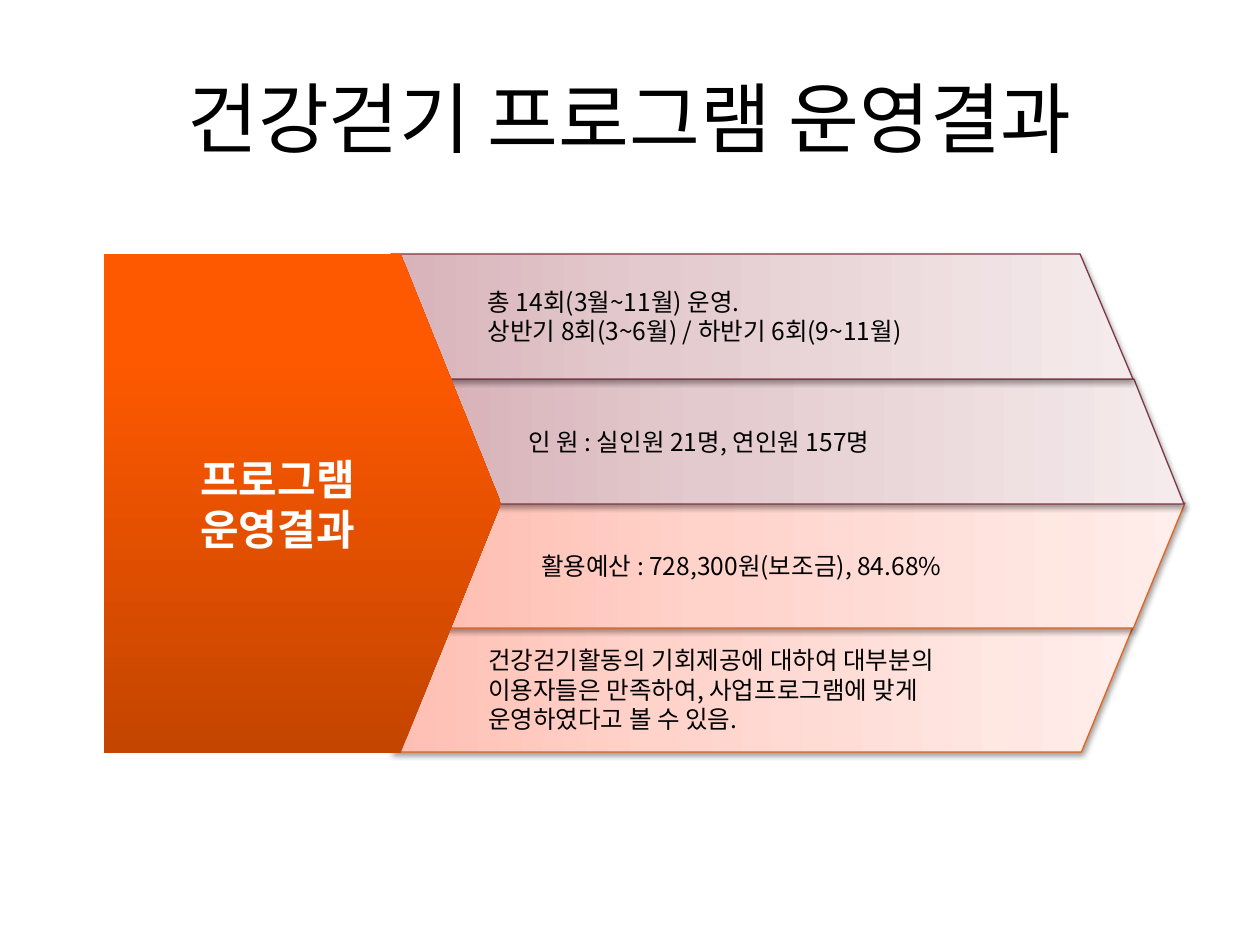
from typing import NamedTuple
from copy import deepcopy
from lxml.etree import SubElement
from pptx import Presentation
from pptx.dml.color import RGBColor
from pptx.enum.shapes import MSO_SHAPE as Kind
from pptx.enum.text import MSO_ANCHOR as Anchor, PP_ALIGN as Align
from pptx.oxml.ns import qn
from pptx.util import Emu, Pt

FONT = "Noto Sans CJK KR"
Stops = list[tuple[float, str]]
ROSE: Stops = [(0, "D8B3B9"), (0.35, "E3CACE"), (1, "F5EBEC")]
PEACH: Stops = [(0, "FFBFB3"), (0.35, "FFD2CA"), (1, "FFEEEB")]
FLAME: Stops = [(0, "C44500"), (0.8, "FE5900"), (1, "FF5A00")]


class Box(NamedTuple):
    left: int
    top: int
    width: int
    height: int


class Band(NamedTuple):
    box: Box
    slant: float
    stops: Stops
    edge: str
    lines: list[str]
    flip: bool = False
    pad: tuple[int, int] = (13, 13)


BANDS = [
    Band(Box(392, 627, 741, 125), 0.412, PEACH, "EB6015",
         ["건강걷기활동의 기회제공에 대하여 대부분의 이용자들은 만족하여, "
          "사업프로그램에 맞게 운영하였다고 볼 수 있음."]),
    Band(Box(445, 503, 740, 125), 0.412, PEACH, "EB6015",
         ["활용예산 : 728,300원(보조금), 84.68%"]),
    Band(Box(446, 379, 738, 125), 0.401, ROSE, "7C3947",
         ["인 원 : 실인원 21명, 연인원 157명"], True, (0, 13)),
    Band(Box(391, 254, 742, 125), 0.423, ROSE, "7C3947",
         ["총 14회(3월~11월) 운영.", "상반기 8회(3~6월) / 하반기 6회(9~11월)"],
         True, (13, 15)),
]


def px(count: int) -> Emu:
    """Turn pixels into EMU."""
    return Emu(round(count * 914400 / 126))


def rgb(code: str) -> RGBColor:
    """Make a colour from a hex string."""
    return RGBColor.from_string(code)


def write(shape, lines: list[str], size: int, hue: str, align: Align,
          bold: bool = False, wrap: bool = True) -> None:
    """Fill a shape with one paragraph per line."""
    frame = shape.text_frame
    frame.word_wrap = wrap
    frame.vertical_anchor = Anchor.MIDDLE
    frame.text = "\n".join(lines)
    for para in frame.paragraphs:
        para.alignment = align
        font = para.font
        font.size, font.bold, font.name = Pt(size), bold, FONT
        font.color.rgb = rgb(hue)
        SubElement(para._p.pPr.find(qn("a:defRPr")), qn("a:ea"), typeface=FONT)


def add(slide, kind: Kind, box: Box, slant: float, stops: Stops, angle: int):
    """Add a shape with a gradient fill and no outline."""
    shape = slide.shapes.add_shape(kind, *map(px, box))
    shape.adjustments[0] = slant
    shape.shadow.inherit = False
    shape.line.fill.background()
    shape.fill.gradient()
    shape.fill.gradient_angle = angle
    group = shape._element.spPr.find(".//" + qn("a:gsLst"))
    group.append(deepcopy(group[-1]))
    for stop, (place, hue) in zip(shape.fill.gradient_stops, stops):
        stop.position = place
        stop.color.rgb = rgb(hue)
    return shape


def shade(shape) -> None:
    """Give a shape a soft shadow below it."""
    effect = shape._element.spPr.find(qn("a:effectLst"))
    outer = SubElement(effect, qn("a:outerShdw"), blurRad="40000",
                       dist="20000", dir="5400000", rotWithShape="0")
    tint = SubElement(outer, qn("a:srgbClr"), val="000000")
    SubElement(tint, qn("a:alpha"), val="38000")


def draw(slide, band: Band) -> None:
    """Draw one slanted band with its text."""
    angle = 180 if band.flip else 0
    shape = add(slide, Kind.PARALLELOGRAM, band.box, band.slant, band.stops, angle)
    if band.flip:
        shape._element.spPr.xfrm.set("flipH", "1")
    shape.line.color.rgb = rgb(band.edge)
    shape.line.width = Pt(0.75)
    shade(shape)
    frame = shape.text_frame
    frame.margin_left, frame.margin_right = map(px, band.pad)
    write(shape, band.lines, 14, "000000", Align.LEFT, wrap=not band.flip)


def main() -> None:
    """Build the slide and save it."""
    deck = Presentation()
    deck.slide_width, deck.slide_height = px(1260), px(945)
    slide = deck.slides.add_slide(deck.slide_layouts[6])
    title = slide.shapes.add_textbox(*map(px, Box(63, 38, 1134, 157)))
    write(title, ["건강걷기 프로그램 운영결과"], 44, "000000", Align.CENTER)
    for band in BANDS:
        draw(slide, band)
    arrow = add(slide, Kind.PENTAGON, Box(104, 254, 397, 499), 0.253, FLAME, 90)
    write(arrow, ["프로그램", "운영결과"], 24, "FFFFFF", Align.CENTER, bold=True)
    deck.save("out.pptx")


if __name__ == "__main__":
    main()
